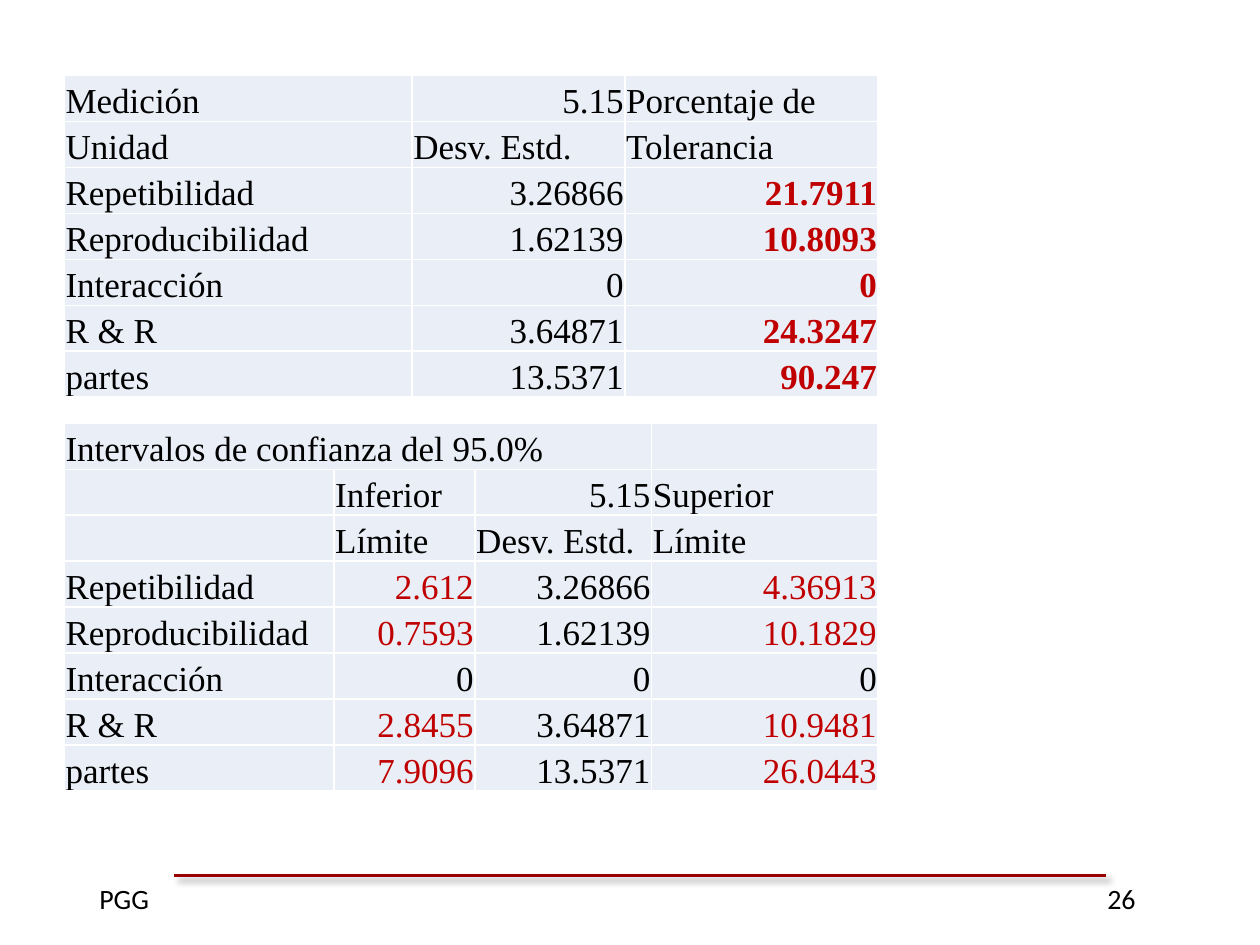
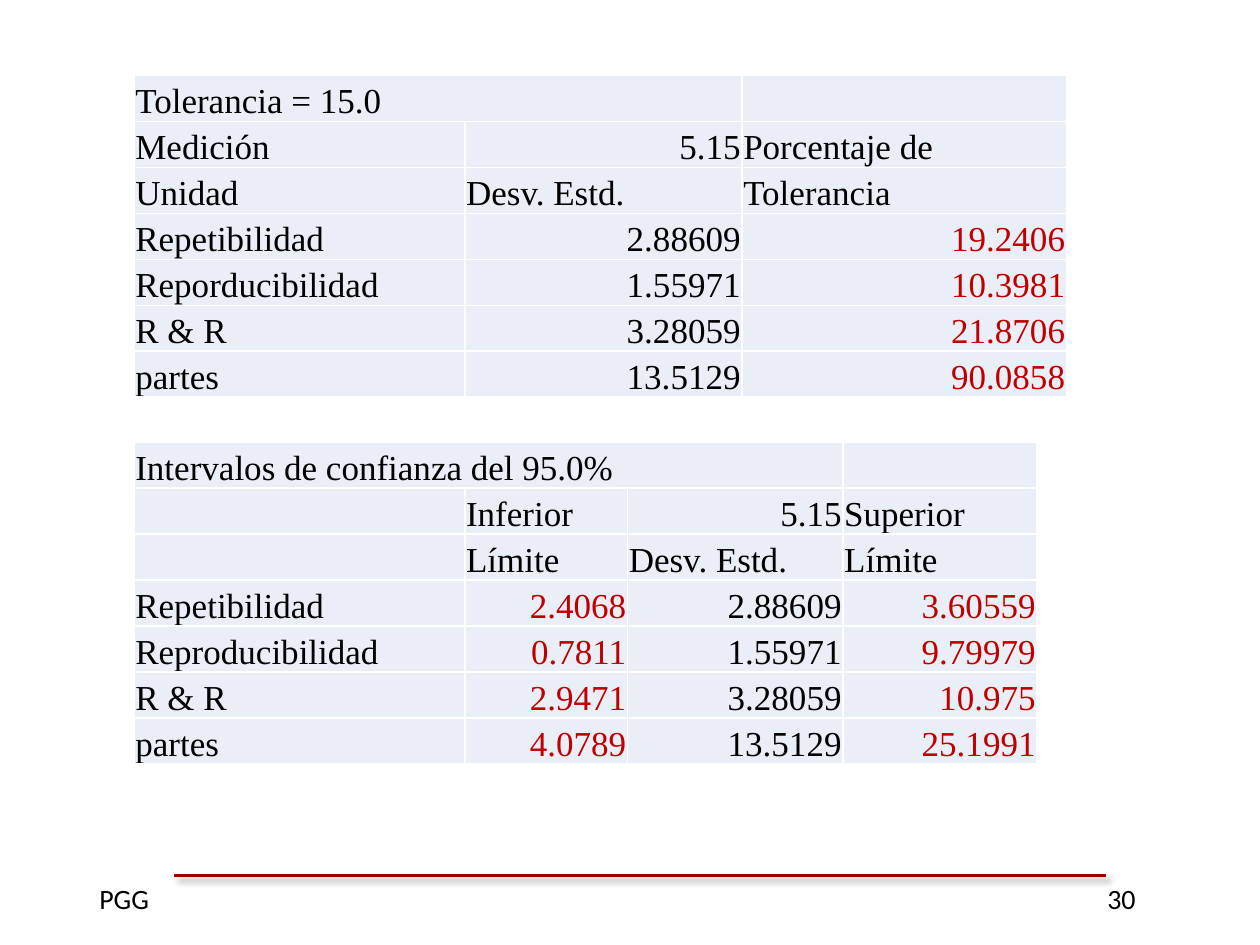
from dataclasses import dataclass

from lxml.etree import SubElement
from pptx import Presentation
from pptx.dml.color import RGBColor
from pptx.enum.shapes import MSO_CONNECTOR as Connector
from pptx.enum.text import MSO_ANCHOR as Anchor, PP_ALIGN as Align
from pptx.oxml import parse_xml
from pptx.oxml.ns import nsdecls, qn
from pptx.util import Pt


@dataclass(frozen=True)
class Theme:
    text: str = "000000"
    accent: str = "C00000"
    cell: str = "EAEFF7"
    border: str = "FFFFFF"
    rule: str = "990000"
    table_font: str = "Times New Roman"
    footer_font: str = "Calibri"
    table_size: float = 20
    footer_size: float = 16
    row_height: float = 26.25
    cell_margin: float = 0.75
    table_top: float = 43.2


THEME = Theme()

TOLERANCE_HEADER = [
    ("Medición", "5.15", "Porcentaje de"),
    ("Unidad", "Desv. Estd.", "Tolerancia"),
]
INTERVAL_HEADER = [
    ("Intervalos de confianza del 95.0%", "", "", ""),
    ("", "Inferior", "5.15", "Superior"),
    ("", "Límite", "Desv. Estd.", "Límite"),
]


def style_run(run, font_name, size, color, bold=False):
    run.font.name = font_name
    run.font.size = Pt(size)
    run.font.bold = bold
    run.font.color.rgb = RGBColor.from_string(color)


def add_borders(cell):
    properties = cell._tc.get_or_add_tcPr()
    for position, side in enumerate(("lnL", "lnR", "lnT", "lnB")):
        border = parse_xml(
            f'<a:{side} {nsdecls("a")} w="{Pt(1)}"><a:solidFill>'
            f'<a:srgbClr val="{THEME.border}"/></a:solidFill></a:{side}>'
        )
        properties.insert(position, border)


def format_cell(cell, text, color, bold):
    cell.fill.solid()
    cell.fill.fore_color.rgb = RGBColor.from_string(THEME.cell)
    cell.vertical_anchor = Anchor.BOTTOM
    cell.margin_left = cell.margin_right = cell.margin_top = Pt(THEME.cell_margin)
    cell.margin_bottom = 0
    add_borders(cell)
    if not text:
        return
    cell.text_frame.text = text
    paragraph = cell.text_frame.paragraphs[0]
    is_number = text.replace(".", "").isdigit()
    paragraph.alignment = Align.RIGHT if is_number else Align.LEFT
    style_run(paragraph.runs[0], THEME.table_font, THEME.table_size, color, bold)


def add_results_table(slide, left, top, widths, header, results,
                      accent_columns, title_span=1, accent_bold=False, unaccented=()):
    rows = header + results
    table = slide.shapes.add_table(
        len(rows), len(widths), Pt(left), Pt(top),
        Pt(sum(widths)), Pt(THEME.row_height * len(rows)),
    ).table
    table.first_row = table.horz_banding = False
    for column, width in zip(table.columns, widths):
        column.width = Pt(width)
    for row_index, values in enumerate(rows):
        table.rows[row_index].height = Pt(THEME.row_height)
        for column_index, text in enumerate(values):
            accented = (row_index >= len(header) and column_index in accent_columns
                        and values[0] not in unaccented)
            color = THEME.accent if accented else THEME.text
            format_cell(table.cell(row_index, column_index), text,
                        color, accented and accent_bold)
    if title_span > 1:
        table.cell(0, 0).merge(table.cell(0, title_span - 1))


def add_tolerance_table(slide, left, widths, header, results, **options):
    add_results_table(slide, left, THEME.table_top, widths, header, results,
                      accent_columns=(2,), **options)


def add_interval_table(slide, left, top, widths, results, **options):
    add_results_table(slide, left, top, widths, INTERVAL_HEADER, results,
                      accent_columns=(1, 3), title_span=3, **options)


def add_footer_text(slide, number):
    box = slide.shapes.add_textbox(Pt(49.68), Pt(500.4), Pt(620.64), Pt(26.64))
    box.text_frame.word_wrap = True
    box.text_frame.text = f"PGG\t{number}"
    paragraph = box.text_frame.paragraphs[0]
    tab_list = SubElement(paragraph._p.get_or_add_pPr(), qn("a:tabLst"))
    SubElement(tab_list, qn("a:tab"), pos=str(Pt(576)), algn="l")
    for run in paragraph.runs:
        style_run(run, THEME.footer_font, THEME.footer_size, THEME.text)


def add_footer_rule(slide):
    rule = slide.shapes.add_connector(
        Connector.STRAIGHT, Pt(99.36), Pt(500.4), Pt(632.16), Pt(500.4))
    rule.line.color.rgb = RGBColor.from_string(THEME.rule)
    rule.line.width = Pt(1.5)
    rule._element.spPr.append(parse_xml(
        f'<a:effectLst {nsdecls("a")}><a:outerShdw blurRad="{Pt(4)}" dist="{Pt(3)}" '
        'dir="2700000" algn="tl" rotWithShape="0"><a:srgbClr val="000000">'
        '<a:alpha val="40000"/></a:srgbClr></a:outerShdw></a:effectLst>'
    ))


def add_slide(presentation, number):
    slide = presentation.slides.add_slide(presentation.slide_layouts[6])
    add_footer_text(slide, number)
    add_footer_rule(slide)
    return slide


def build_interaction_slide(presentation):
    slide = add_slide(presentation, 26)
    left = 36.72
    add_tolerance_table(slide, left, (198.72, 121.68, 144.72), TOLERANCE_HEADER, [
        ("Repetibilidad", "3.26866", "21.7911"),
        ("Reproducibilidad", "1.62139", "10.8093"),
        ("Interacción", "0", "0"),
        ("R & R", "3.64871", "24.3247"),
        ("partes", "13.5371", "90.247"),
    ], accent_bold=True)
    add_interval_table(slide, left, 241.92, (154.08, 80.64, 101, 129.4), [
        ("Repetibilidad", "2.612", "3.26866", "4.36913"),
        ("Reproducibilidad", "0.7593", "1.62139", "10.1829"),
        ("Interacción", "0", "0", "0"),
        ("R & R", "2.8455", "3.64871", "10.9481"),
        ("partes", "7.9096", "13.5371", "26.0443"),
    ], unaccented=("Interacción",))


def build_tolerance_slide(presentation):
    slide = add_slide(presentation, 30)
    left = 76.6
    header = [("Tolerancia = 15.0", "", "")] + TOLERANCE_HEADER
    add_tolerance_table(slide, left, (189, 158.4, 185.4), header, [
        ("Repetibilidad", "2.88609", "19.2406"),
        ("Reporducibilidad", "1.55971", "10.3981"),
        ("R & R", "3.28059", "21.8706"),
        ("partes", "13.5129", "90.0858"),
    ], title_span=2)
    add_interval_table(slide, left, 252.72, (189, 93, 123.12, 110.88), [
        ("Repetibilidad", "2.4068", "2.88609", "3.60559"),
        ("Reproducibilidad", "0.7811", "1.55971", "9.79979"),
        ("R & R", "2.9471", "3.28059", "10.975"),
        ("partes", "4.0789", "13.5129", "25.1991"),
    ])


def main():
    presentation = Presentation()
    presentation.slide_width = Pt(720)
    presentation.slide_height = Pt(540)
    build_interaction_slide(presentation)
    build_tolerance_slide(presentation)
    presentation.save("out.pptx")


if __name__ == "__main__":
    main()
